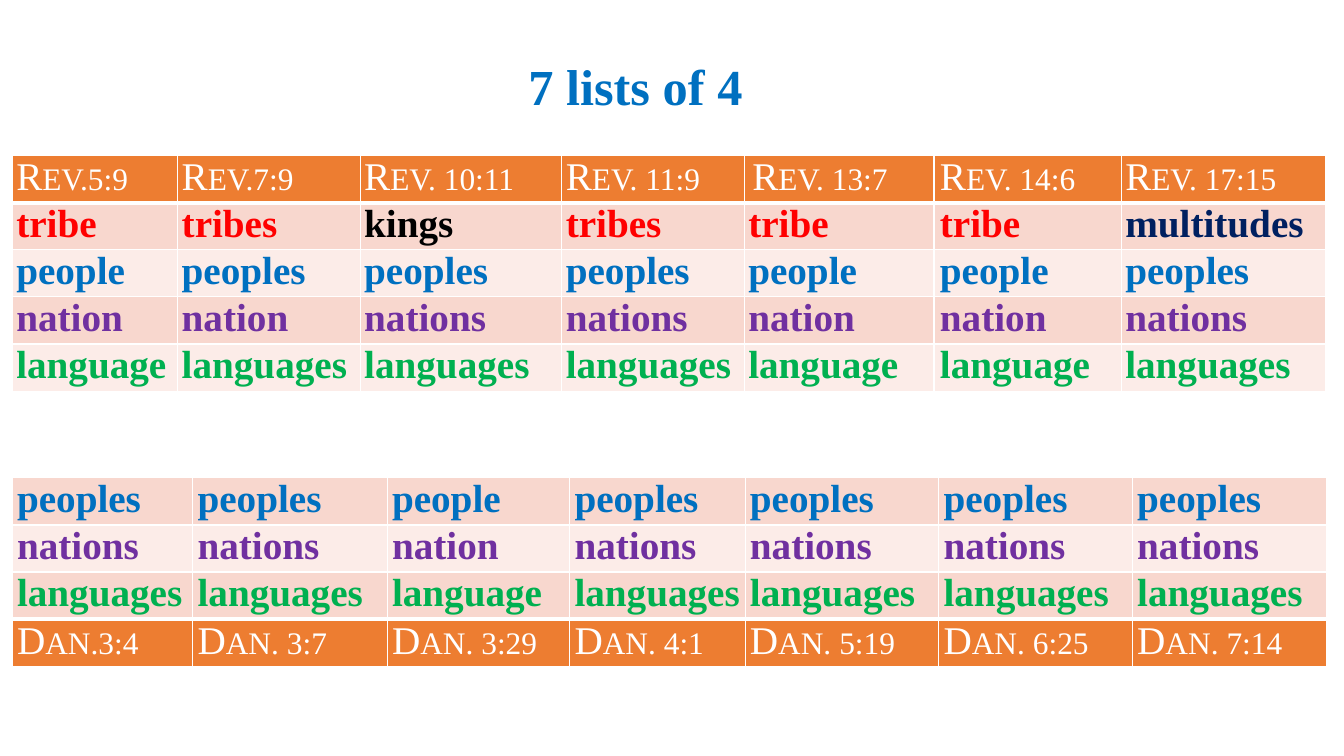
from pptx import Presentation
from pptx.dml.color import RGBColor
from pptx.enum.text import MSO_ANCHOR, MSO_AUTO_SIZE, PP_ALIGN
from pptx.oxml.ns import qn
from pptx.util import Cm, Pt
from lxml.etree import SubElement

COLORS = {
    "white": "FFFFFF", "orange": "ED7D31", "rose": "F8D7CE", "blush": "FCECE8",
    "red": "FF0000", "black": "000000", "navy": "002060", "blue": "0070C0",
    "purple": "7030A0", "green": "00B050",
}
WORD_COLORS = {
    "tribe": "red", "kings": "black", "multitudes": "navy",
    "people": "blue", "nation": "purple", "language": "green",
}

REVELATION = [
    ["Rev.5:9", "Rev.7:9", "Rev. 10:11", "Rev. 11:9", "Rev. 13:7", "Rev. 14:6", "Rev. 17:15"],
    ["tribe", "tribes", "kings", "tribes", "tribe", "tribe", "multitudes"],
    ["people", "peoples", "peoples", "peoples", "people", "people", "peoples"],
    ["nation", "nation", "nations", "nations", "nation", "nation", "nations"],
    ["language", "languages", "languages", "languages", "language", "language", "languages"],
]
DANIEL = [
    ["peoples", "peoples", "people", "peoples", "peoples", "peoples", "peoples"],
    ["nations", "nations", "nation", "nations", "nations", "nations", "nations"],
    ["languages", "languages", "language", "languages", "languages", "languages", "languages"],
    ["Dan.3:4", "Dan. 3:7", "Dan. 3:29", "Dan. 4:1", "Dan. 5:19", "Dan. 6:25", "Dan. 7:14"],
]


def color(name):
    return RGBColor.from_string(COLORS[name])


def word_color(word):
    return WORD_COLORS.get(word) or WORD_COLORS[word.removesuffix("s")]


def write(frame, text, font="Times New Roman", size=28, ink="white", bold=False,
          small_caps=False, align=PP_ALIGN.LEFT, indent=0):
    paragraph = frame.paragraphs[0]
    paragraph.alignment = align
    paragraph.line_spacing = 1.0
    if indent:
        paragraph._p.get_or_add_pPr().set("marL", str(Cm(indent)))
    run = paragraph.add_run()
    run.text = text
    run.font.name = font
    run.font.size = Pt(size)
    run.font.bold = bold
    run.font.color.rgb = color(ink)
    if small_caps:
        run.font._element.set("cap", "small")


class ListsSlide:
    row_height = 1.09
    thin, thick = 1, 3

    def __init__(self, presentation):
        self.slide = presentation.slides.add_slide(presentation.slide_layouts[5])

    def title(self, text, left, top, width, height):
        heading = self.slide.shapes.title
        heading.left, heading.top = Cm(left), Cm(top)
        heading.width, heading.height = Cm(width), Cm(height)
        frame = heading.text_frame
        frame.word_wrap = False
        frame.auto_size = MSO_AUTO_SIZE.SHAPE_TO_FIT_TEXT
        frame.vertical_anchor = MSO_ANCHOR.TOP
        write(frame, text, size=36, ink="blue", bold=True, align=PP_ALIGN.CENTER)

    def borders(self, cell, **widths):
        properties = cell._tc.get_or_add_tcPr()
        for side in "LRTB":
            width = widths.get(side, self.thin)
            line = SubElement(properties, qn(f"a:ln{side}"), w=str(Pt(width)))
            fill = SubElement(line, qn("a:solidFill"))
            SubElement(fill, qn("a:srgbClr"), val=COLORS["white"])

    def table(self, rows, left, top, widths, heading_row, heading_edge, inset,
              justified, indents=None, heading_indents=None):
        table = self.slide.shapes.add_table(
            len(rows), len(widths), Cm(left), Cm(top),
            Cm(sum(widths)), Cm(self.row_height * len(rows))).table
        table.first_row = heading_row == 0
        table.last_row = heading_row > 0
        table.horz_banding = False
        for column, width in zip(table.columns, widths):
            column.width = Cm(width)
        bands = 0
        for r, words in enumerate(rows):
            table.rows[r].height = Cm(self.row_height)
            is_heading = r == heading_row
            background = "orange" if is_heading else ("rose", "blush")[bands % 2]
            bands += not is_heading
            row_indents = {**(indents or {}), **(is_heading and heading_indents or {})}
            for c, word in enumerate(words):
                cell = table.cell(r, c)
                cell.margin_left = cell.margin_right = Cm(inset)
                cell.margin_top = cell.margin_bottom = 0
                self.borders(cell, **({heading_edge: self.thick} if is_heading else {}))
                cell.fill.solid()
                cell.fill.fore_color.rgb = color(background)
                write(cell.text_frame, word,
                      ink="white" if is_heading else word_color(word),
                      bold=not is_heading, small_caps=is_heading,
                      align=PP_ALIGN.JUSTIFY if c in justified else PP_ALIGN.LEFT,
                      indent=row_indents.get(c, 0))


def main():
    presentation = Presentation()
    presentation.slide_width, presentation.slide_height = Cm(33.87), Cm(19.05)
    lists = ListsSlide(presentation)
    lists.table(REVELATION, 0.31, 3.92, [4.17, 4.6, 5.08, 4.6, 4.78, 4.72, 5.16],
                heading_row=0, heading_edge="B", inset=0.1,
                justified={0, 2, 3, 4, 5, 6}, indents={5: 0.05}, heading_indents={4: 0.1})
    lists.table(DANIEL, 0.31, 12.04, [4.55, 4.9, 4.6, 4.42, 4.88, 4.88, 4.88],
                heading_row=3, heading_edge="T", inset=0.12, justified={6})
    lists.title("7 lists of 4", 13.03, 1.27, 5.97, 1.8)
    presentation.save("out.pptx")


if __name__ == "__main__":
    main()
